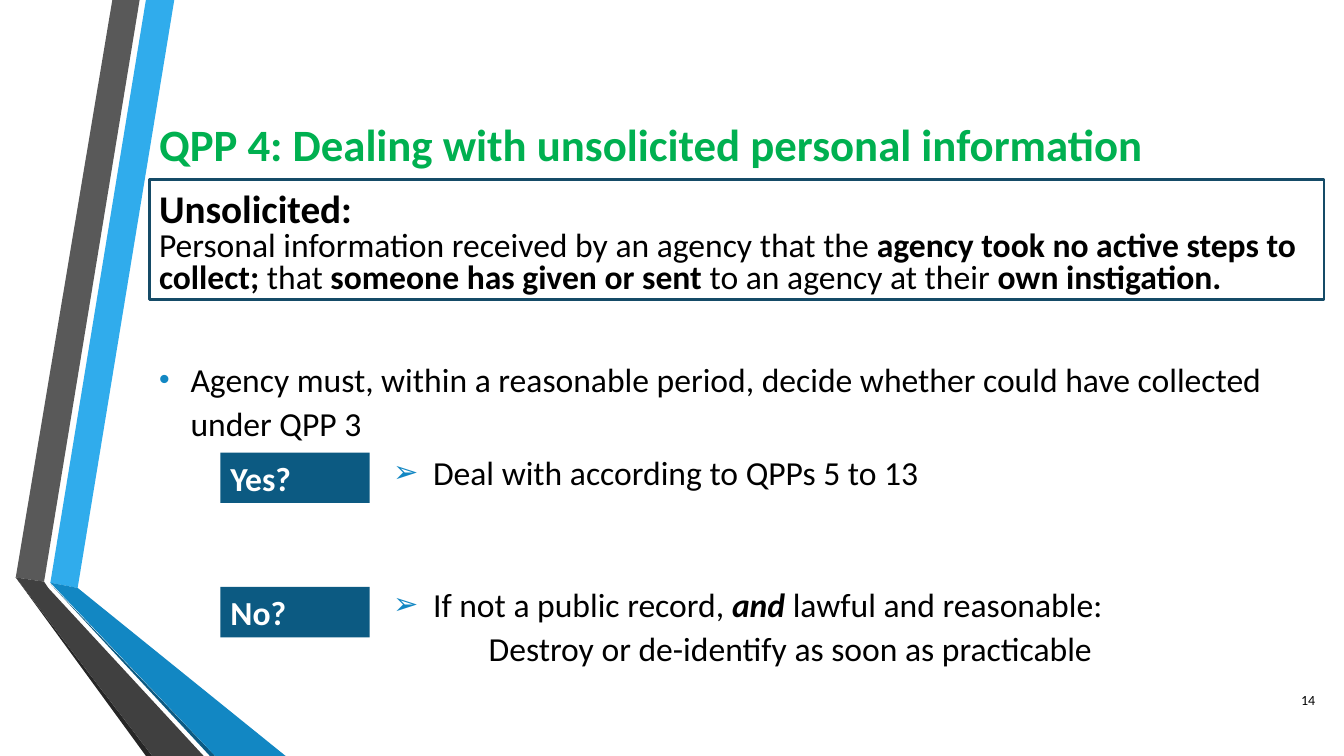
from lxml import etree
from pptx import Presentation
from pptx import util as u
from pptx.dml.color import RGBColor
from pptx.enum import shapes, text
from pptx.oxml import ns

PX = 9525
HUES = {
    "sky": "30ACEC", "grey": "595959", "ink": "262626", "navy": "0C5A82",
    "blue": "1287C3", "coal": "404040", "green": "00B050", "edge": "154B67",
    "black": "000000", "white": "FFFFFF",
}
BANDS = [
    ("sky", [(48, 555), (74, 560), (166, 0), (139, 0)]),
    ("grey", [(133, 0), (107, 0), (15, 550), (42, 554)]),
    ("ink", [(15, 550), (139, 720), (145, 720)]),
    ("navy", [(48, 556), (200, 720), (205, 720)]),
    ("blue", [(48, 555), (205, 720), (272, 720), (74, 560)]),
    ("coal", [(194, 720), (46, 560), (42, 554), (15, 550), (145, 720)]),
]


def hue(name):
    """Return the named colour."""
    return RGBColor.from_string(HUES[name])


def put(para, *runs, size=24, color="black", bold=False, align=None,
        lead=None, after=0, left=0, hang=0, mark=None):
    """Fill a paragraph with runs, each a string or a (string, style) pair."""
    props = para._p.get_or_add_pPr()
    props.set("marL", str(left * PX))
    props.set("indent", str(-hang * PX))
    para.alignment = align
    para.line_spacing = lead
    para.space_after = u.Pt(after)
    if mark:
        tint = etree.SubElement(props, ns.qn("a:buClr"))
        etree.SubElement(tint, ns.qn("a:srgbClr"), val=HUES["blue"])
        etree.SubElement(props, ns.qn("a:buSzPct"), val="90000")
        etree.SubElement(props, ns.qn("a:buFont"), typeface="Arial")
        etree.SubElement(props, ns.qn("a:buChar"), char=mark)
    for item in runs:
        words, style = (item, "") if isinstance(item, str) else item
        run = para.add_run()
        run.text = words
        font = run.font
        font.name, font.size = "Calibri", u.Pt(size)
        font.color.rgb = hue(color)
        font.bold = bold or "b" in style
        font.italic = "i" in style


class Deck:
    """Hold the style and the current slide."""

    def __init__(self):
        """Start a wide deck with one blank slide."""
        self.show = Presentation()
        self.show.slide_width, self.show.slide_height = 1280 * PX, 720 * PX
        self.page = self.show.slides.add_slide(self.show.slide_layouts[6])

    def paint(self, shape, fill=None, line=None):
        """Set the fill and outline of a shape."""
        shape.shadow.inherit = False
        if fill:
            shape.fill.solid()
            shape.fill.fore_color.rgb = hue(fill)
        else:
            shape.fill.background()
        if line:
            shape.line.color.rgb = hue(line)
            shape.line.width = u.Pt(2)
        else:
            shape.line.fill.background()

    def band(self, fill, dots):
        """Draw a filled outline through the given dots."""
        pen = self.page.shapes.build_freeform(*dots[0], scale=PX)
        pen.add_line_segments(dots[1:], close=True)
        self.paint(pen.convert_to_shape(), fill)

    def typeset(self, shape, paras, anchor):
        """Set paragraphs, each a (runs, format) pair, in a shape."""
        frame = shape.text_frame
        frame.word_wrap = True
        frame.vertical_anchor = anchor
        for i, (runs, look) in enumerate(paras):
            para = frame.add_paragraph() if i else frame.paragraphs[0]
            put(para, *runs, **look)

    def label(self, area, *paras, anchor=text.MSO_ANCHOR.TOP):
        """Add a text box."""
        box = self.page.shapes.add_textbox(*(n * PX for n in area))
        self.typeset(box, paras, anchor)

    def panel(self, area, *paras, fill=None, line=None):
        """Add a rectangle with text."""
        box = self.page.shapes.add_shape(
            shapes.MSO_SHAPE.RECTANGLE, *(n * PX for n in area))
        self.paint(box, fill, line)
        self.typeset(box, paras, text.MSO_ANCHOR.TOP)


def main():
    """Build and save the slide."""
    deck = Deck()
    left = text.PP_ALIGN.LEFT
    mid = text.MSO_ANCHOR.MIDDLE
    for fill, dots in BANDS:
        deck.band(fill, dots)
    deck.label(
        (142, 95, 1119, 84),
        (["QPP 4: Dealing with unsolicited personal information"],
         dict(size=32, color="green", bold=True)), anchor=mid)
    deck.panel(
        (142, 171, 1119, 114),
        (["Unsolicited:"], dict(size=28, bold=True, align=left)),
        (["Personal information received by an agency that the",
          (" agency took no active steps to collect; ", "b"), "that ",
          ("someone has given or sent", "b"), " to an agency at their ",
          ("own instigation.", "b")],
         dict(align=left, lead=0.8, after=6)), line="edge")
    step = dict(left=261, hang=38, mark="➢", after=3)
    deck.label(
        (142, 333, 1097, 150),
        (["Agency must, within a reasonable period, decide whether could "
          "have collected under QPP 3"],
         dict(left=30, hang=30, mark="•", lead=1.1, after=6)),
        (["Deal with according to QPPs 5 to 13"], step))
    deck.label(
        (142, 551, 1097, 96),
        (["If not a public record, ", ("and", "bi"),
          " lawful and reasonable:"], step),
        (["Destroy or de-identify as soon as practicable"],
         dict(left=314, after=3)))
    for top, word in ((431, "Yes?"), (559, "No?")):
        deck.panel((210, top, 142, 48),
                   ([word], dict(color="white", bold=True, align=left)),
                   fill="navy")
    deck.label((1204, 648, 58, 38),
               (["14"], dict(size=10, align=text.PP_ALIGN.RIGHT)), anchor=mid)
    deck.show.save("out.pptx")


if __name__ == "__main__":
    main()
